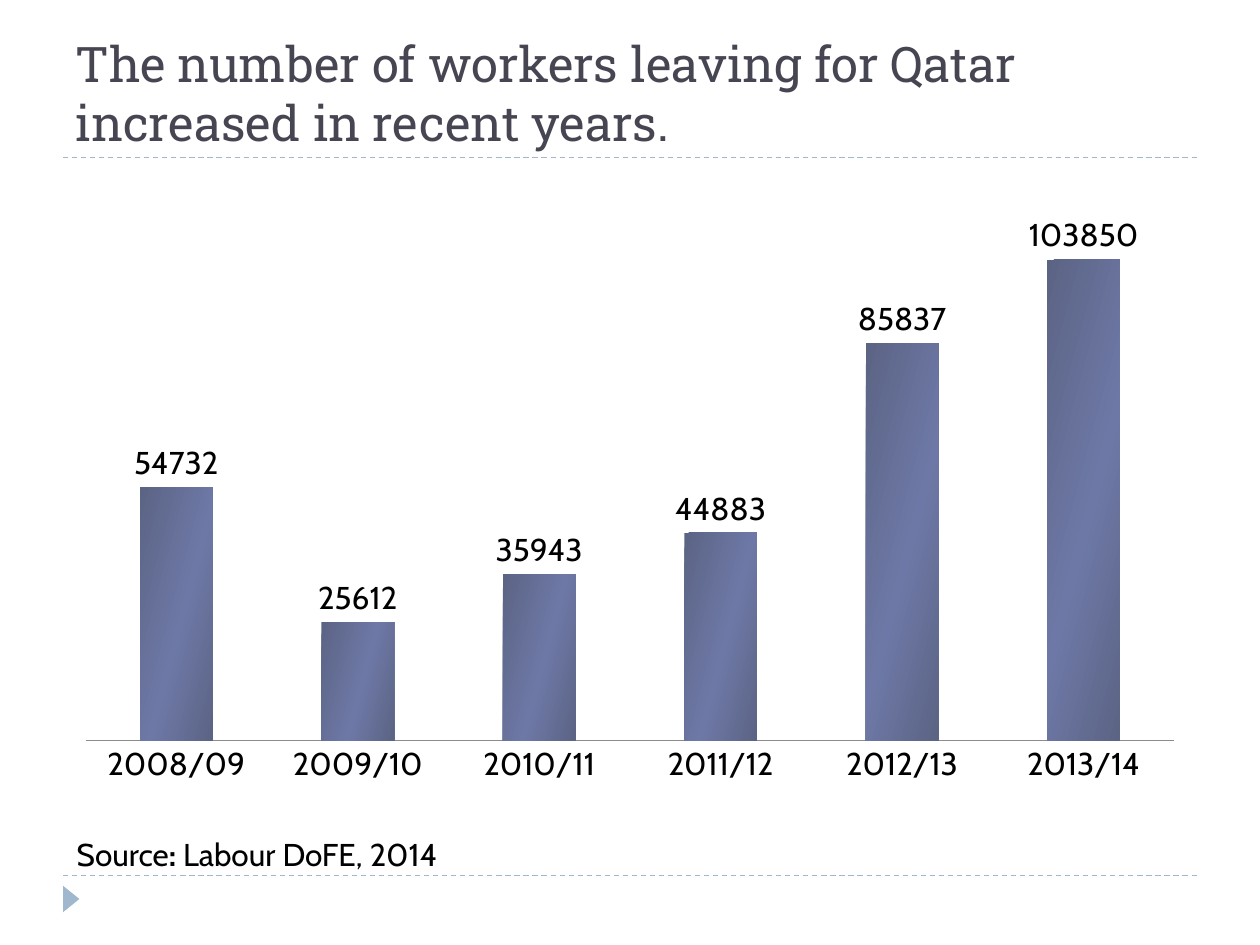
from lxml.etree import SubElement
from pptx import Presentation
from pptx.chart.data import CategoryChartData
from pptx.dml.color import RGBColor
from pptx.enum.chart import XL_CHART_TYPE, XL_LABEL_POSITION, XL_TICK_MARK
from pptx.enum.dml import MSO_LINE
from pptx.enum.shapes import MSO_CONNECTOR, MSO_SHAPE
from pptx.enum.text import MSO_ANCHOR, MSO_AUTO_SIZE, PP_ALIGN
from pptx.oxml import parse_xml
from pptx.oxml.ns import nsdecls, qn
from pptx.util import Inches, Pt

HEADING = RGBColor(0x46, 0x46, 0x53)
TEXT = RGBColor(0x00, 0x00, 0x00)
ACCENT = RGBColor(0x9F, 0xB8, 0xCD)
AXIS = RGBColor(0x8C, 0x8C, 0x8C)
BAR = RGBColor(0x6D, 0x78, 0xA6)
BAR_SHADE = RGBColor(0x5C, 0x64, 0x84)

HEADING_FONT = "Roboto Slab"
BODY_FONT = "Cabin"

DEPARTURES = {
    "2008/09": 54732,
    "2009/10": 25612,
    "2010/11": 35943,
    "2011/12": 44883,
    "2012/13": 85837,
    "2013/14": 103850,
}


def style_font(font, name, size, color):
    """Set the typeface, point size and colour of a font."""
    font.name = name
    font.size = Pt(size)
    font.color.rgb = color


def add_rule(slide, y):
    """Draw a dashed rule across the slide at height y."""
    rule = slide.shapes.add_connector(
        MSO_CONNECTOR.STRAIGHT, Inches(0.5), Inches(y), Inches(9.5), Inches(y))
    rule.line.color.rgb = ACCENT
    rule.line.width = Pt(0.75)
    rule.line.dash_style = MSO_LINE.DASH
    SubElement(rule._element.spPr, qn("a:effectLst"))


def add_page_marker(slide):
    """Draw the small triangle pointing right below the lower rule."""
    marker = slide.shapes.add_shape(
        MSO_SHAPE.ISOSCELES_TRIANGLE,
        Inches(0.46), Inches(7.07), Inches(0.21), Inches(0.13))
    marker.rotation = 90
    marker.shadow.inherit = False
    marker.fill.solid()
    marker.fill.fore_color.rgb = ACCENT
    marker.line.fill.background()


def set_heading(slide, wording):
    """Place and format the title placeholder."""
    heading = slide.shapes.title
    heading.left, heading.top = Inches(0.5), Inches(0.17)
    heading.width, heading.height = Inches(9), Inches(1.08)
    frame = heading.text_frame
    frame.auto_size = MSO_AUTO_SIZE.NONE
    frame.vertical_anchor = MSO_ANCHOR.BOTTOM
    paragraph = frame.paragraphs[0]
    paragraph.alignment = PP_ALIGN.LEFT
    run = paragraph.add_run()
    run.text = wording
    style_font(run.font, HEADING_FONT, 28, HEADING)


def shade_bars(series):
    """Fill the bars with a slanted gradient that darkens at both edges."""
    stops = "".join(
        f'<a:gs pos="{percent * 1000}"><a:srgbClr val="{color}"/></a:gs>'
        for percent, color in ((0, BAR_SHADE), (55, BAR), (100, BAR_SHADE)))
    gradient = parse_xml(
        f'<a:gradFill {nsdecls("a")} rotWithShape="1"><a:gsLst>{stops}</a:gsLst>'
        '<a:lin ang="900000" scaled="0"/></a:gradFill>')
    series.format.line.fill.background()
    series._element.get_or_add_spPr().insert(0, gradient)


def add_departures_chart(slide):
    """Add the column chart of workers leaving per year."""
    departures = CategoryChartData()
    departures.categories = list(DEPARTURES)
    departures.add_series("Series 1", list(DEPARTURES.values()))
    chart = slide.shapes.add_chart(
        XL_CHART_TYPE.COLUMN_CLUSTERED,
        Inches(0.5), Inches(1.37), Inches(9), Inches(4.95), departures).chart
    chart.has_title = False
    chart.has_legend = False
    style_font(chart.font, BODY_FONT, 18, TEXT)

    years = chart.category_axis
    years.major_tick_mark = XL_TICK_MARK.NONE
    years.format.line.color.rgb = AXIS
    workers = chart.value_axis
    workers.minimum_scale, workers.maximum_scale = 0, 120000
    workers.has_major_gridlines = False
    workers.visible = False

    plot = chart.plots[0]
    plot.gap_width = 150
    plot.vary_by_categories = False
    shade_bars(plot.series[0])
    plot.has_data_labels = True
    labels = plot.data_labels
    labels.show_value = True
    labels.position = XL_LABEL_POSITION.OUTSIDE_END
    style_font(labels.font, BODY_FONT, 18, TEXT)


def add_source_note(slide, pieces):
    """Add the source line from pairs of wording and boldness."""
    note = slide.shapes.add_textbox(
        Inches(0.51), Inches(6.58), Inches(8.55), Inches(0.71))
    frame = note.text_frame
    frame.word_wrap = True
    frame.auto_size = MSO_AUTO_SIZE.SHAPE_TO_FIT_TEXT
    for wording, bold in pieces:
        run = frame.paragraphs[0].add_run()
        run.text = wording
        run.font.bold = bold
        style_font(run.font, BODY_FONT, 18, TEXT)


def main():
    """Build the slide and save it."""
    deck = Presentation()
    deck.slide_width, deck.slide_height = Inches(10), Inches(7.5)
    slide = deck.slides.add_slide(deck.slide_layouts[5])
    for y in (6.95, 1.25):
        add_rule(slide, y)
    add_page_marker(slide)
    set_heading(
        slide, "The number of workers leaving for Qatar increased in recent years.")
    add_departures_chart(slide)
    add_source_note(
        slide, [("Source", False), (": ", True), ("Labour DoFE, 2014", False)])
    deck.save("out.pptx")


if __name__ == "__main__":
    main()
